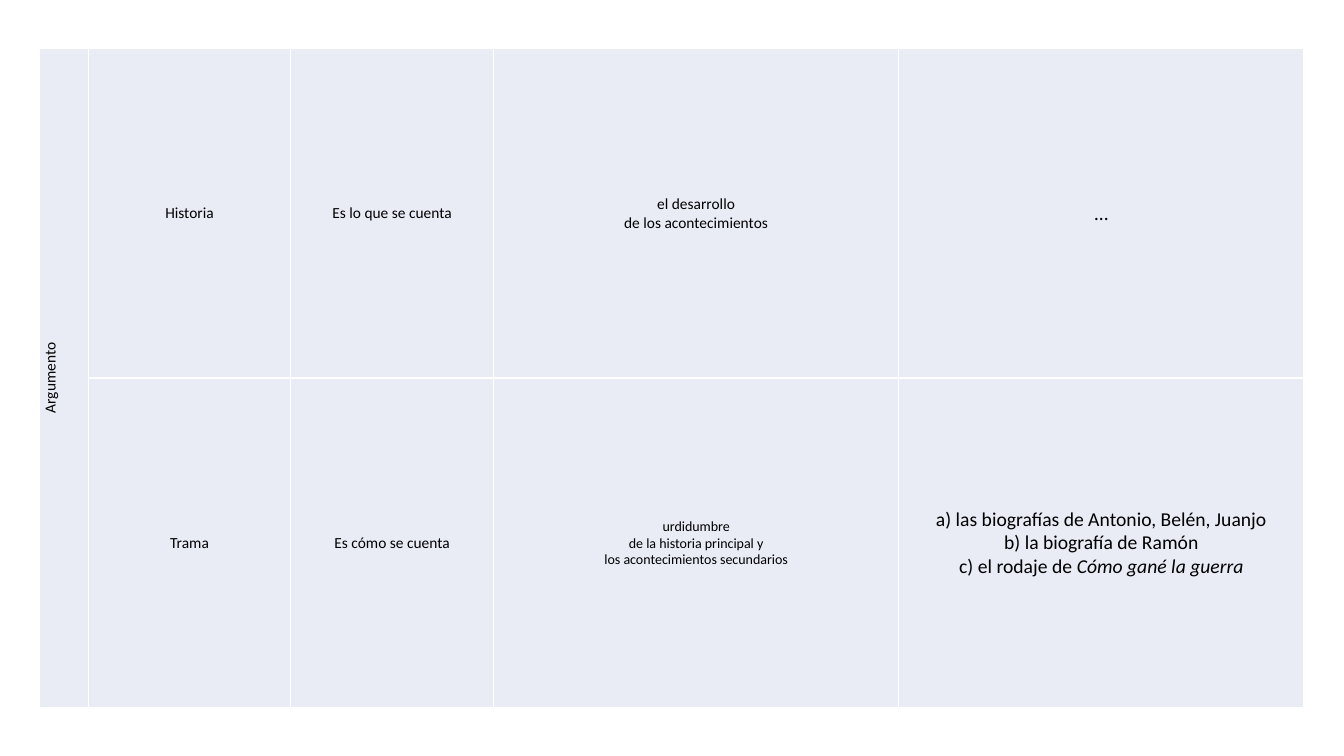
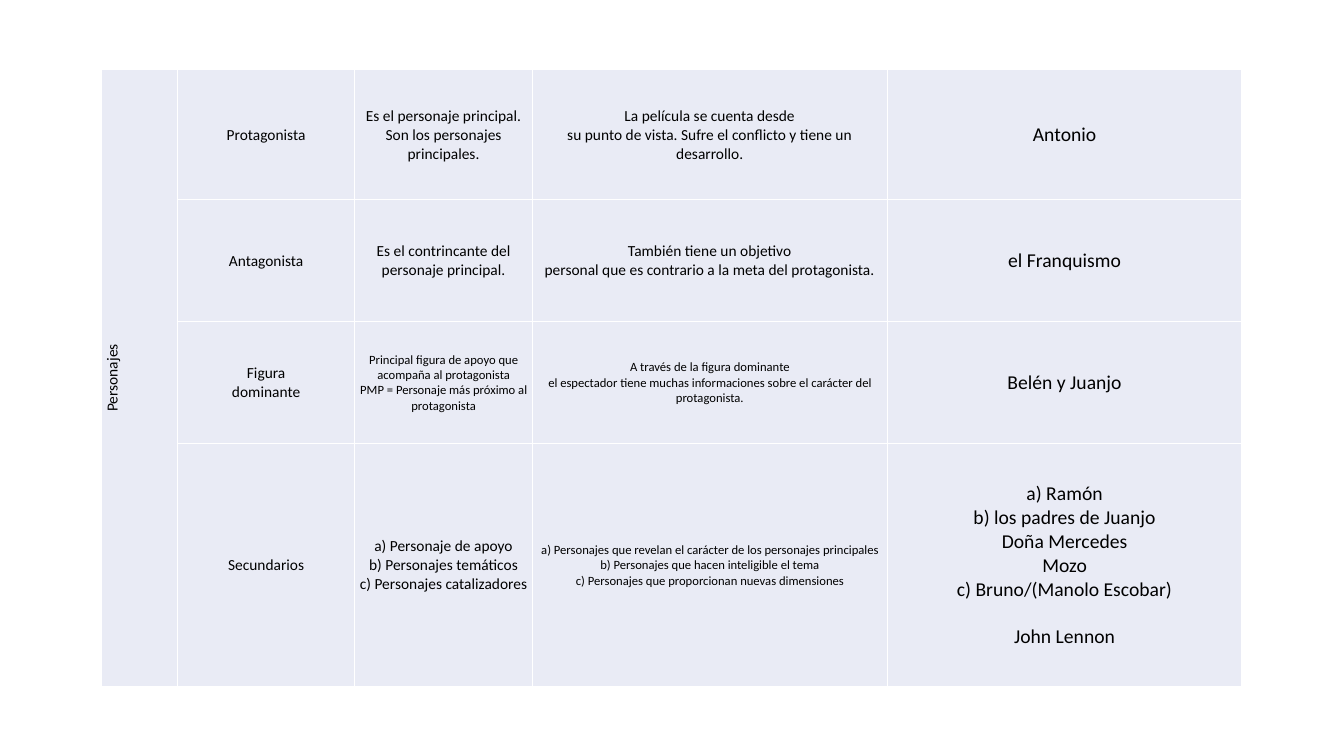
from lxml import etree
from pptx import Presentation
from pptx import util as u
from pptx.dml.color import RGBColor
from pptx.enum import text
from pptx.oxml import ns

WIDE, HIGH = 13.33, 7.5
FONT = "Calibri"
BODY, LAST = 11, 14
TINT = RGBColor(0xE9, 0xEB, 0xF5)
INK = RGBColor(0x00, 0x00, 0x00)
RULE = RGBColor(0xFF, 0xFF, 0xFF)

# Each cell is a text or a (text, size) pair; a list holds paragraphs,
# and asterisks enclose italics.
PLOT = [
    ["Historia", "Es lo que se cuenta",
     "el desarrollo\nde los acontecimientos", "…"],
    ["Trama", "Es cómo se cuenta",
     ("urdidumbre\nde la historia principal y\nlos acontecimientos secundarios", 10),
     "a) las biografías de Antonio, Belén, Juanjo\nb) la biografía de Ramón\n"
     "c) el rodaje de *Cómo gané la guerra*"],
]
CAST = [
    ["Protagonista",
     "Es el personaje principal.\nSon los personajes principales.",
     "La película se cuenta desde\n"
     "su punto de vista. Sufre el conflicto y tiene un desarrollo.",
     "Antonio"],
    ["Antagonista", "Es el contrincante del personaje principal.",
     "También tiene un objetivo\n"
     "personal que es contrario a la meta del protagonista.",
     "el Franquismo"],
    ["Figura\ndominante",
     ("Principal figura de apoyo que acompaña al protagonista\n"
      "PMP = Personaje más próximo al protagonista", 9),
     ("A través de la figura dominante\n"
      "el espectador tiene muchas informaciones sobre el carácter del protagonista.", 9),
     "Belén y Juanjo"],
    ["Secundarios",
     "a) Personaje de apoyo\nb) Personajes temáticos\nc) Personajes catalizadores",
     ("a) Personajes que revelan el carácter de los personajes principales\n"
      "b) Personajes que hacen inteligible el tema\n"
      "c) Personajes que proporcionan nuevas dimensiones", 9),
     ["a) Ramón", "b) los padres de Juanjo\nDoña Mercedes\nMozo",
      "c) Bruno/(Manolo Escobar)", "John Lennon"]],
]

# Side heading, its width, width of a narrow column, row heights, rows
PAGES = [
    ("Argumento", 0.48, 2.01, [3.27, 3.27], PLOT),
    ("Personajes", 0.75, 1.76, [1.29, 1.21, 1.21, 2.41], CAST),
]


def frame(cell):
    """Tint the cell, draw its white borders and set its margins."""
    cell.fill.solid()
    cell.fill.fore_color.rgb = TINT
    cell.vertical_anchor = text.MSO_ANCHOR.MIDDLE
    cell.margin_left = cell.margin_right = cell.margin_top = u.Inches(0.01)
    cell.margin_bottom = 0
    props = cell._tc.get_or_add_tcPr()
    for n, side in enumerate(["lnL", "lnR", "lnT", "lnB"]):
        line = etree.Element(ns.qn("a:" + side), w=str(u.Pt(1)))
        fill = etree.SubElement(line, ns.qn("a:solidFill"))
        etree.SubElement(fill, ns.qn("a:srgbClr"), val=str(RULE))
        props.insert(n, line)


def write(cell, words, size):
    if isinstance(words, tuple):
        words, size = words
    parts = words if isinstance(words, list) else [words]
    for n, part in enumerate(parts):
        para = cell.text_frame.paragraphs[0] if n == 0 else cell.text_frame.add_paragraph()
        plain, *slant = part.split("*")
        para.text = plain
        if slant:
            run = para.add_run()
            run.text = slant[0]
            run.font.italic = True
        para.alignment = text.PP_ALIGN.CENTER
        para.font.name = FONT
        para.font.size = u.Pt(size)
        para.font.color.rgb = INK
    return para


deck = Presentation()
deck.slide_width, deck.slide_height = u.Inches(WIDE), u.Inches(HIGH)

for head, slim, unit, tall, rows in PAGES:
    slide = deck.slides.add_slide(deck.slide_layouts[6])
    cols = [slim, unit, unit, 2 * unit, 2 * unit]
    wide, high = sum(cols), sum(tall)
    grid = slide.shapes.add_table(
        len(tall), len(cols), u.Inches((WIDE - wide) / 2),
        u.Inches((HIGH - high) / 2), u.Inches(wide), u.Inches(high)).table
    grid.first_row = grid.horz_banding = False
    for col, size in zip(grid.columns, cols):
        col.width = u.Inches(size)
    for row, size in zip(grid.rows, tall):
        row.height = u.Inches(size)
    for cell in grid.iter_cells():
        frame(cell)

    side = grid.cell(0, 0)
    side.merge(grid.cell(len(tall) - 1, 0))
    side._tc.get_or_add_tcPr().set("vert", "vert270")
    write(side, head, BODY)
    for r, row in enumerate(rows):
        for c, words in enumerate(row, 1):
            para = write(grid.cell(r, c), words, LAST if c == len(row) else BODY)
            if isinstance(words, list):
                para.space_before = u.Pt(17)  # sets the last name apart

deck.save("out.pptx")
